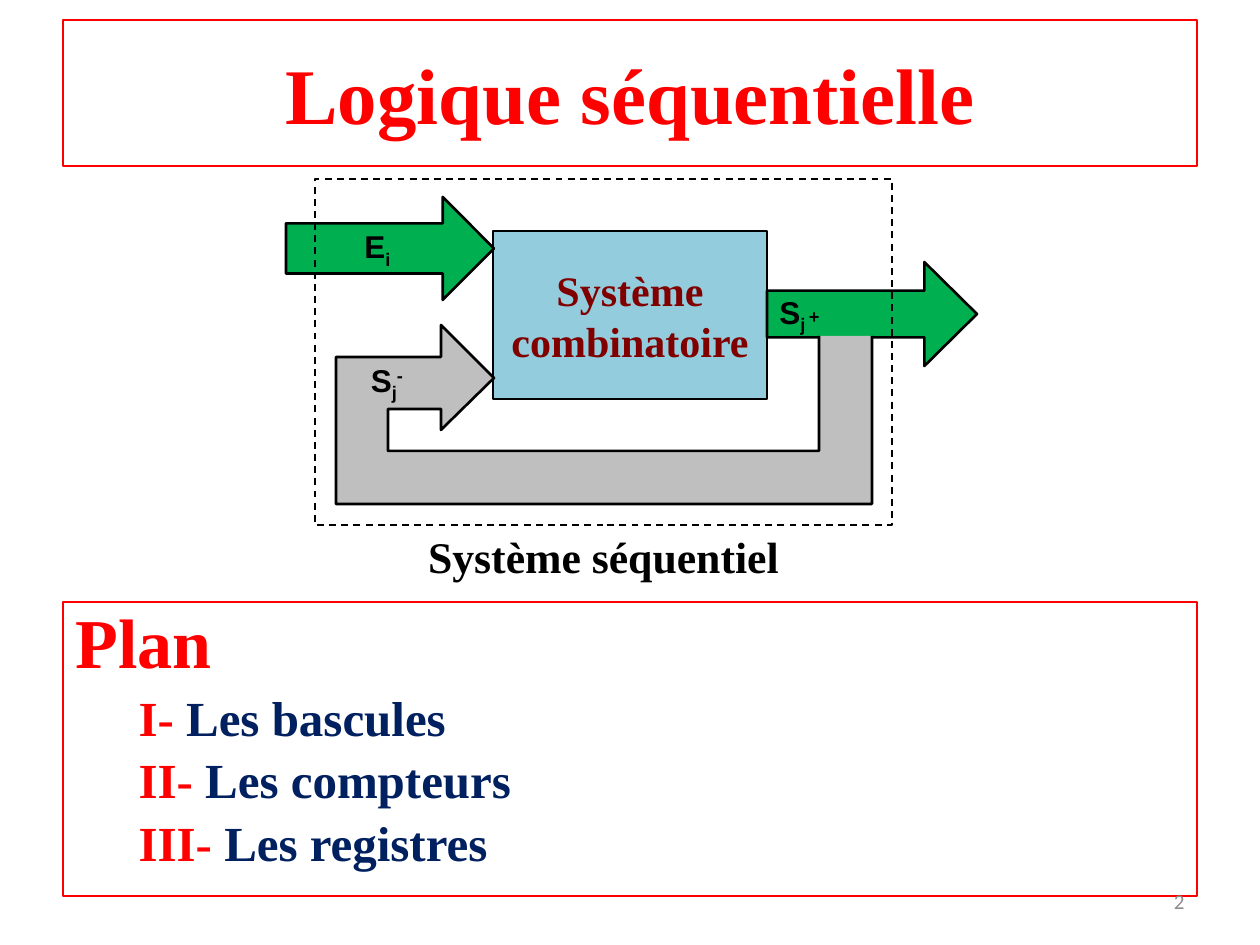
from lxml.etree import SubElement
from pptx import Presentation
from pptx.dml.color import RGBColor
from pptx.enum.dml import MSO_LINE
from pptx.enum.shapes import MSO_SHAPE
from pptx.enum.text import MSO_ANCHOR, MSO_AUTO_SIZE, PP_ALIGN
from pptx.oxml.ns import qn
from pptx.util import Emu, Pt

PX = 914400 / 126
SERIF, SANS = "Times New Roman", "Arial"
C = {"red": "FF0000", "navy": "002060", "maroon": "800000", "black": "000000",
     "blue": "93CDDD", "green": "00B050", "grey": "BFBFBF", "number": "8C8C8C"}
CENTER, LEFT, RIGHT = PP_ALIGN.CENTER, PP_ALIGN.LEFT, PP_ALIGN.RIGHT

# Content: boxes are left, top, width, height in px; runs are (text, baseline %)
TITLE = "Logique séquentielle"
PLAN = "Plan"
CHAPTERS = [("I- ", "Les bascules"), ("II- ", "Les compteurs"), ("III- ", "Les registres")]
TITLE_BOX, PLAN_BOX = (63, 20, 1134, 146), (63, 602, 1134, 294)
SYSTEM_BOX = (493, 231, 274, 168)
ARROWS = [
    ((286, 197, 208, 103), (0.487, 0.498), [("E", 0), ("i", -25)], CENTER),
    ((767, 262, 210, 104), (0.449, 0.506), [("S", 0), ("j", -25)], LEFT),
]
FEEDBACK = [(819, 336), (819, 451), (388, 451), (388, 409), (441, 409), (441, 430),
            (494, 378), (441, 325), (441, 357), (336, 357), (336, 504), (872, 504), (872, 336)]
SIGNS = [
    ((352, 355, 70, 54), [("S", 0), ("j", -25), ("-", 30)]),
    ((809, 315, 10, 10), [("+", 30)]),
]
FRAME = (315, 179, 577, 346)
CAPTION = "Système séquentiel"
CAPTION_BOX = (315, 525, 577, 63)
NUMBER_BOX = (903, 876, 294, 50)


def rgb(name):
    return RGBColor.from_string(C[name])


def emu(box):
    return [Emu(round(v * PX)) for v in box]


def outline(sp, color, width, fill=None):
    sp.line.color.rgb = rgb(color)
    sp.line.width = Pt(width)
    if fill:
        sp.fill.solid()
        sp.fill.fore_color.rgb = rgb(fill)
    else:
        sp.fill.background()


def set_font(font, name, size, color, bold=True):
    font.name, font.size, font.bold = name, Pt(size), bold
    font.color.rgb = rgb(color)


def write(sp, lines, name, size, color, align=CENTER):
    tf = sp.text_frame
    tf.word_wrap = False
    tf.vertical_anchor = MSO_ANCHOR.MIDDLE
    for i, runs in enumerate(lines):
        p = tf.add_paragraph() if i else tf.paragraphs[0]
        p.alignment = align
        set_font(p.font, name, size, color)
        for text, base in runs:
            r = p.add_run()
            r.text = text
            if base:
                r._r.get_or_add_rPr().set("baseline", str(base * 1000))


def add_shape(s, kind, box, color, width, fill=None):
    sp = s.shapes.add_shape(kind, *emu(box))
    sp.shadow.inherit = False
    outline(sp, color, width, fill)
    return sp


def place(sp, box):
    sp.left, sp.top, sp.width, sp.height = emu(box)
    outline(sp, "red", 0.75)
    sp.text_frame.auto_size = MSO_AUTO_SIZE.NONE
    return sp.text_frame


prs = Presentation()
prs.slide_width, prs.slide_height = emu((1260, 945))
s = prs.slides.add_slide(prs.slide_layouts[1])

# Title
tf = place(s.shapes.title, TITLE_BOX)
tf.text = TITLE
set_font(tf.paragraphs[0].font, SERIF, 45, "red")

# Plan
tf = place(s.placeholders[1], PLAN_BOX)
for i, parts in enumerate([(PLAN,)] + CHAPTERS):
    p = tf.add_paragraph() if i else tf.paragraphs[0]
    p.level = 1 if i else 0
    p.line_spacing = 0.9
    SubElement(p._p.get_or_add_pPr(), qn("a:buNone"))
    set_font(p.font, SERIF, 28 if i else 40, "red")
    for part, color in zip(parts, ("red", "navy")):
        r = p.add_run()
        r.text = part
        r.font.color.rgb = rgb(color)

# Combinational block
sp = add_shape(s, MSO_SHAPE.RECTANGLE, SYSTEM_BOX, "black", 1.5, "blue")
write(sp, [[("Système", 0)], [("combinatoire", 0)]], SERIF, 24, "maroon")

# Input and output arrows
for box, adjustments, runs, align in ARROWS:
    sp = add_shape(s, MSO_SHAPE.RIGHT_ARROW, box, "black", 1.5, "green")
    for i, value in enumerate(adjustments):
        sp.adjustments[i] = value
    write(sp, [runs], SANS, 18, "black", align)

# Feedback loop, left open where it leaves the output arrow
builder = s.shapes.build_freeform(*FEEDBACK[0], scale=PX)
builder.add_line_segments(FEEDBACK[1:], close=False)
sp = builder.convert_to_shape()
sp.shadow.inherit = False
outline(sp, "black", 1.5, "grey")
for box, runs in SIGNS:
    write(s.shapes.add_textbox(*emu(box)), [runs], SANS, 18, "black")

# Sequential system frame and caption
sp = add_shape(s, MSO_SHAPE.RECTANGLE, FRAME, "black", 1)
sp.line.dash_style = MSO_LINE.DASH
write(s.shapes.add_textbox(*emu(CAPTION_BOX)), [[(CAPTION, 0)]], SERIF, 25, "black")

# Slide number
tf = s.shapes.add_textbox(*emu(NUMBER_BOX)).text_frame
tf.word_wrap = True
tf.vertical_anchor = MSO_ANCHOR.MIDDLE
p = tf.paragraphs[0]
p.text = "2"
p.alignment = RIGHT
set_font(p.font, "Calibri", 12, "number", False)

prs.save("out.pptx")
